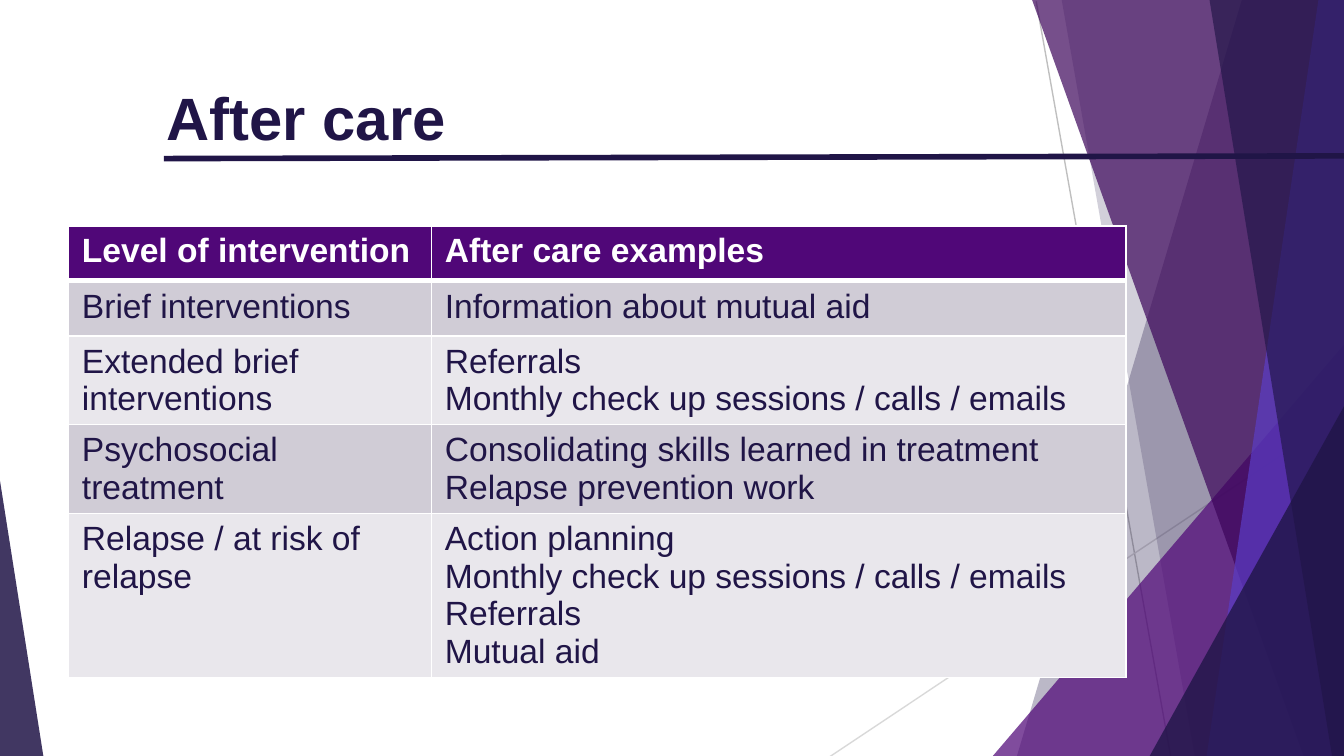
"""Build the "After care" slide: faceted background, ruled title and a table."""
from dataclasses import dataclass

from lxml import etree
from pptx import Presentation
from pptx.dml.color import RGBColor
from pptx.enum.shapes import MSO_CONNECTOR, MSO_SHAPE
from pptx.enum.text import MSO_ANCHOR, PP_ALIGN
from pptx.oxml.ns import qn
from pptx.util import Inches, Pt

STRAIGHT = MSO_CONNECTOR.STRAIGHT
TRIANGLE = MSO_SHAPE.ISOSCELES_TRIANGLE
TOP = MSO_ANCHOR.TOP
LEFT = PP_ALIGN.LEFT
FONT = "Arial"
COLORS = {
    "navy": "201547", "purple": "500778", "plum": "3C055A", "violet": "5B3DC6",
    "gray": "BFBFBF", "light_gray": "D9D9D9", "white": "FFFFFF",
    "dark_band": "D0CCD6", "light_band": "E9E7EC",
}
SLIDE_WIDTH = 10
SLIDE_HEIGHT = SLIDE_WIDTH * 9 / 16
BLEED_RIGHT, BLEED_BOTTOM = 10.04, 5.68


@dataclass
class Rule:
    start: tuple[float, float]
    end: tuple[float, float]
    color: str
    width: float


@dataclass
class Facet:
    top_left: float
    bottom_left: float
    color: str
    opacity: int


@dataclass
class Wedge:
    left: float
    top: float
    width: float
    height: float
    apex: float
    color: str
    opacity: int


@dataclass
class Row:
    height: float
    level: str
    examples: list[str]


RULES = [
    Rule((7.71, 0.01), (8.72, BLEED_BOTTOM), "gray", 0.75),
    Rule((BLEED_RIGHT, 3.05), (6.1, BLEED_BOTTOM), "light_gray", 0.75),
]
TITLE_RULE = Rule((1.22, 1.18), (10, 1.16), "navy", 3)
BACKDROP = [
    Facet(9.24, 7.55, "navy", 30),
    Facet(7.9, 8.9, "navy", 20),
    Wedge(7.34, 2.53, 2.69, 3.15, 1, "purple", 72),
    Facet(7.68, 9.72, "plum", 70),
    Facet(9.81, 8.97, "violet", 70),
    Facet(9, 9.92, "navy", 65),
    Wedge(8.53, 2.97, 1.5, 2.7, 1, "navy", 80),
    Wedge(-0.04, 3.32, 0.37, 2.35, 0, "navy", 85),
]
COLUMNS = [2.7, 5.17]
CHECK_UP = "Monthly check up sessions / calls / emails"
ROWS = [
    Row(0.41, "Level of intervention", ["After care examples"]),
    Row(0.41, "Brief interventions", ["Information about mutual aid"]),
    Row(0.66, "Extended brief interventions", ["Referrals", CHECK_UP]),
    Row(0.66, "Psychosocial treatment",
        ["Consolidating skills learned in treatment", "Relapse prevention work"]),
    Row(1.21, "Relapse / at risk of relapse",
        ["Action planning", CHECK_UP, "Referrals", "Mutual aid"]),
]


def rgb(name: str) -> RGBColor:
    return RGBColor.from_string(COLORS[name])


def write(frame, lines: list[str], *, size: float, color: str, bold: bool = False) -> None:
    frame.text = "\n".join(lines)
    for para in frame.paragraphs:
        para.alignment = LEFT
        for span in para.runs:
            span.font.name = FONT
            span.font.size = Pt(size)
            span.font.bold = bold
            span.font.color.rgb = rgb(color)


def draw_rule(page, rule: Rule) -> None:
    line = page.shapes.add_connector(
        STRAIGHT, *(Inches(value) for value in rule.start + rule.end))
    line.line.color.rgb = rgb(rule.color)
    line.line.width = Pt(rule.width)
    etree.SubElement(line._element.spPr, qn("a:effectLst"))


def paint(shape, color: str, opacity: int) -> None:
    shape.shadow.inherit = False
    shape.line.fill.background()
    shape.fill.solid()
    shape.fill.fore_color.rgb = rgb(color)
    tint = shape._element.spPr.find(qn("a:solidFill")).find(qn("a:srgbClr"))
    etree.SubElement(tint, qn("a:alpha"), val=str(opacity * 1000))


def draw_facet(page, facet: Facet) -> None:
    corners = [(BLEED_RIGHT, 0), (BLEED_RIGHT, BLEED_BOTTOM), (facet.bottom_left, BLEED_BOTTOM)]
    builder = page.shapes.build_freeform(Inches(facet.top_left), 0)
    builder.add_line_segments([(Inches(x), Inches(y)) for x, y in corners], close=True)
    paint(builder.convert_to_shape(), facet.color, facet.opacity)


def draw_wedge(page, wedge: Wedge) -> None:
    shape = page.shapes.add_shape(
        TRIANGLE, Inches(wedge.left), Inches(wedge.top),
        Inches(wedge.width), Inches(wedge.height))
    shape.adjustments[0] = wedge.apex
    paint(shape, wedge.color, wedge.opacity)


def draw_title(page, text: str) -> None:
    box = page.shapes.title
    box.left, box.top = Inches(1.14), Inches(0.55)
    box.width, box.height = Inches(6.85), Inches(1.08)
    frame = box.text_frame
    frame.vertical_anchor = TOP
    frame.margin_top = Inches(0.05)
    write(frame, [text], size=32, color="navy", bold=True)


def set_borders(cell, bottom_width: float) -> None:
    properties = cell._tc.get_or_add_tcPr()
    for side, width in (("L", 1), ("R", 1), ("T", 1), ("B", bottom_width)):
        border = etree.SubElement(properties, qn(f"a:ln{side}"), w=str(Pt(width)))
        fill = etree.SubElement(border, qn("a:solidFill"))
        etree.SubElement(fill, qn("a:srgbClr"), val=COLORS["white"])


def draw_table(page) -> None:
    height = sum(row.height for row in ROWS)
    table = page.shapes.add_table(
        len(ROWS), len(COLUMNS), Inches(0.51), Inches(1.68),
        Inches(sum(COLUMNS)), Inches(height)).table
    for column, width in zip(table.columns, COLUMNS):
        column.width = Inches(width)
    for index, row in enumerate(ROWS):
        header = index == 0
        band = "purple" if header else ("light_band", "dark_band")[index % 2]
        table.rows[index].height = Inches(row.height)
        for cell, lines in zip(table.rows[index].cells, ([row.level], row.examples)):
            set_borders(cell, 3 if header else 1)
            cell.fill.solid()
            cell.fill.fore_color.rgb = rgb(band)
            write(cell.text_frame, lines, size=18,
                  color="white" if header else "navy", bold=header)


def main() -> None:
    deck = Presentation()
    deck.slide_width, deck.slide_height = Inches(SLIDE_WIDTH), Inches(SLIDE_HEIGHT)
    page = deck.slides.add_slide(deck.slide_layouts[5])
    for rule in RULES:
        draw_rule(page, rule)
    for piece in BACKDROP:
        if isinstance(piece, Facet):
            draw_facet(page, piece)
        else:
            draw_wedge(page, piece)
    draw_rule(page, TITLE_RULE)
    draw_title(page, "After care")
    draw_table(page)
    deck.save("out.pptx")


if __name__ == "__main__":
    main()
